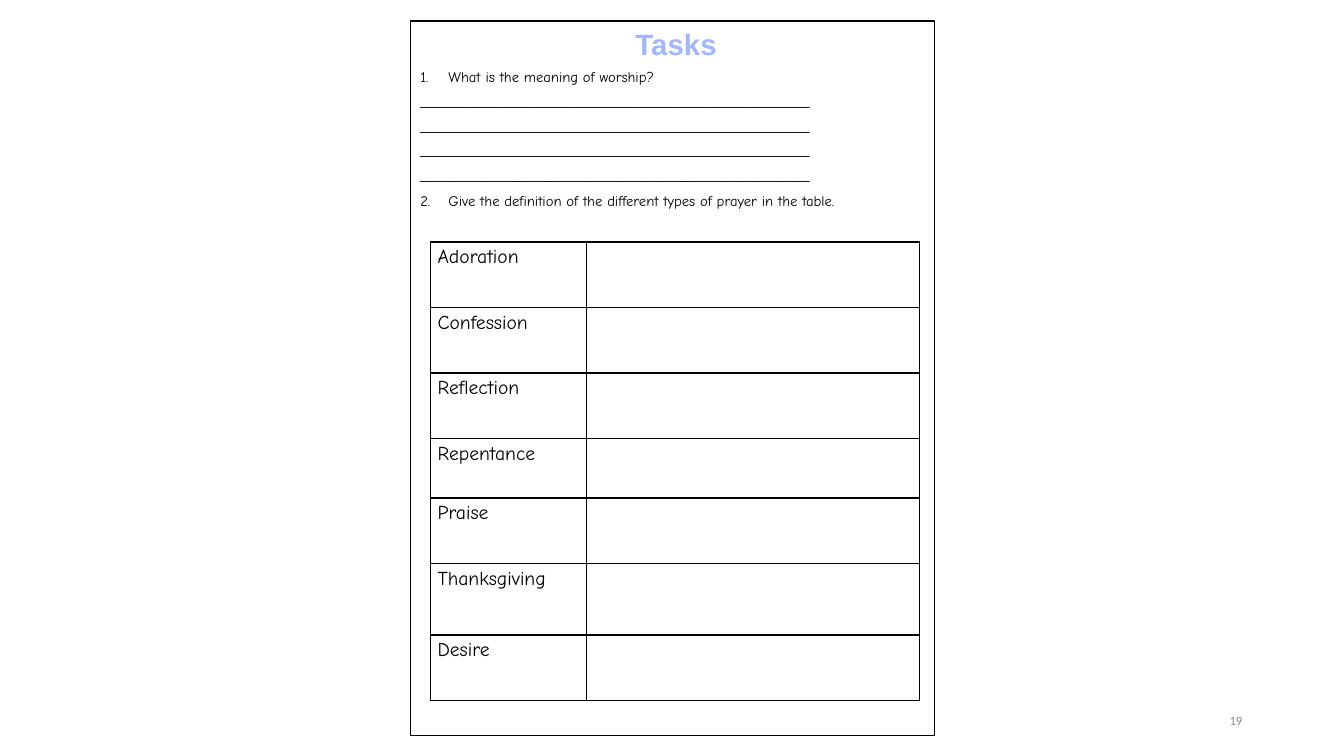
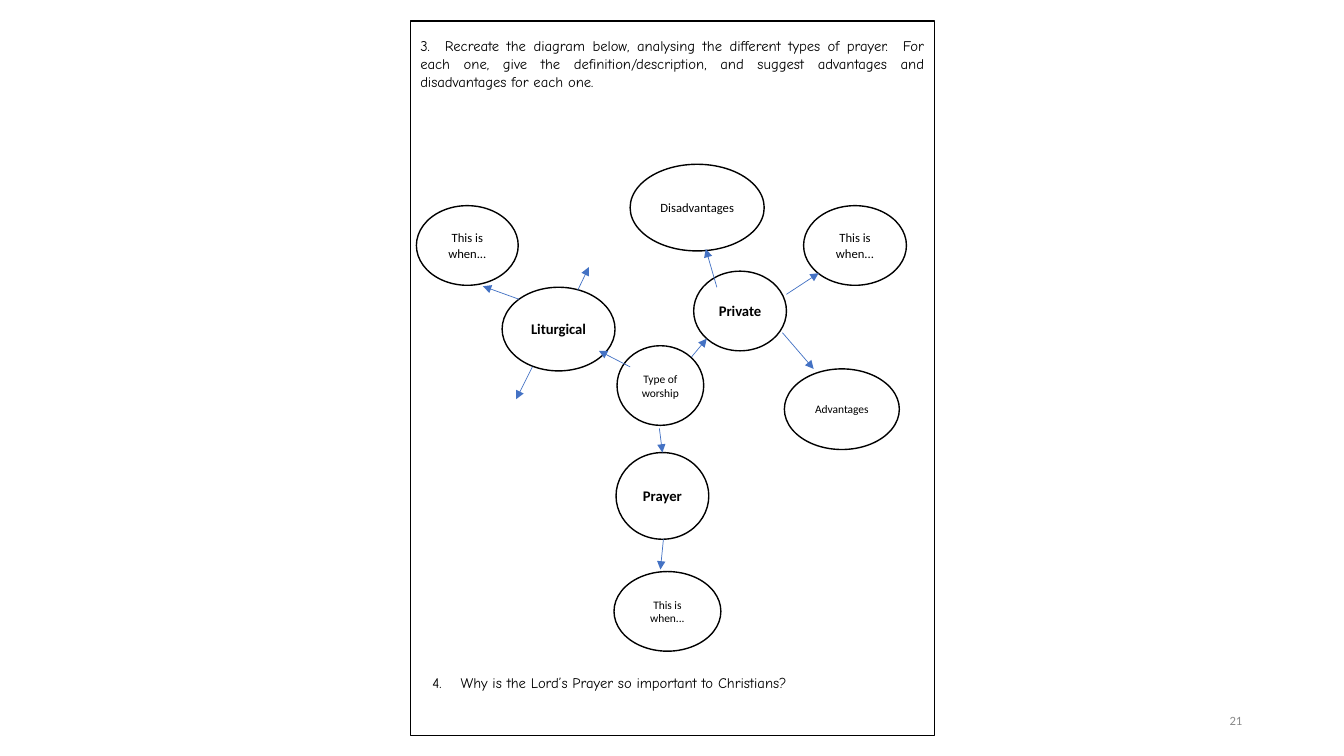
"""Builds two worksheet slides on worship and types of prayer."""
import pptx
import pptx.dml.color
import pptx.enum.shapes
import pptx.enum.text
import pptx.oxml.ns
import pptx.util
from lxml import etree

PX = 9144
BLACK = pptx.dml.color.RGBColor(0x00, 0x00, 0x00)
WHITE = pptx.dml.color.RGBColor(0xFF, 0xFF, 0xFF)
GREY = pptx.dml.color.RGBColor(0x89, 0x89, 0x89)
ARROW_BLUE = pptx.dml.color.RGBColor(0x44, 0x72, 0xC4)
TITLE_BLUE = pptx.dml.color.RGBColor(0xA1, 0xB8, 0xFF)
HAND_FONT = "Comic Neue"
BODY_FONT = "Calibri"
ALIGN = pptx.enum.text.PP_ALIGN
MIDDLE = pptx.enum.text.MSO_ANCHOR.MIDDLE
SHAPE = pptx.enum.shapes.MSO_SHAPE
qn = pptx.oxml.ns.qn


def write(frame, text, size=10.5, font=HAND_FONT, color=BLACK, bold=False,
          align=ALIGN.LEFT, before=0, number=None):
    """Add one formatted paragraph, numbered if a number is given."""
    paragraph = frame.add_paragraph() if frame.text else frame.paragraphs[0]
    paragraph.alignment = align
    paragraph.space_before = pptx.util.Pt(before)
    if number:
        properties = paragraph._p.get_or_add_pPr()
        properties.set("marL", str(28 * PX))
        properties.set("indent", str(-28 * PX))
        etree.SubElement(properties, qn("a:buAutoNum"),
                         type="arabicPeriod", startAt=str(number))
    run = paragraph.add_run()
    run.text = text
    run.font.size = pptx.util.Pt(size)
    run.font.name = font
    run.font.bold = bold
    run.font.color.rgb = color


def add_text_frame(slide, left, top, width, height):
    """Add a wrapping text box and return its frame."""
    box = slide.shapes.add_textbox(left * PX, top * PX, width * PX, height * PX)
    box.text_frame.word_wrap = True
    return box.text_frame


presentation = pptx.Presentation()
presentation.slide_width = 1333 * PX
presentation.slide_height = 750 * PX

slides = []
for page_number in ("19", "21"):
    slide = presentation.slides.add_slide(presentation.slide_layouts[6])
    page = slide.shapes.add_shape(SHAPE.RECTANGLE, 407 * PX, 21 * PX, 520 * PX, 709 * PX)
    page.shadow.inherit = False
    page.fill.background()
    page.line.color.rgb = BLACK
    page.line.width = pptx.util.Pt(1)
    footer = add_text_frame(slide, 942, 695, 300, 40)
    footer.vertical_anchor = MIDDLE
    write(footer, page_number, size=9, font=BODY_FONT, color=GREY, align=ALIGN.RIGHT)
    slides.append(slide)
task_slide, diagram_slide = slides

title = add_text_frame(task_slide, 620, 21, 101, 45)
write(title, "Tasks", size=21, font="Arial", color=TITLE_BLUE, bold=True, align=ALIGN.CENTER)

questions = add_text_frame(task_slide, 407, 62, 520, 210)
write(questions, "What is the meaning of worship?", align=ALIGN.JUSTIFY, number=1)
for answer_line in range(4):
    write(questions, "_" * 54, align=ALIGN.JUSTIFY, before=5.25)
write(questions, "Give the definition of the different types of prayer in the table.",
      align=ALIGN.JUSTIFY, before=5.25, number=2)

prayer_rows = [
    ("Adoration", 65), ("Confession", 65), ("Reflection", 65), ("Repentance", 59),
    ("Praise", 65), ("Thanksgiving", 71), ("Desire", 65),
]
table = task_slide.shapes.add_table(
    len(prayer_rows), 2, 427 * PX, 240 * PX, 485 * PX, 455 * PX).table
table.first_row = False
table.horz_banding = False
for column, width in zip(table.columns, (155, 330)):
    column.width = width * PX
for row, (prayer, height) in zip(table.rows, prayer_rows):
    row.height = height * PX
    write(row.cells[0].text_frame, prayer, size=14)
    for cell in row.cells:
        cell.margin_left = cell.margin_right = 7 * PX
        cell.margin_top = cell.margin_bottom = 4 * PX
        properties = cell._tc.get_or_add_tcPr()
        for side in ("a:lnL", "a:lnR", "a:lnT", "a:lnB"):
            border = etree.SubElement(properties, qn(side), w=str(pptx.util.Pt(1)))
            fill = etree.SubElement(border, qn("a:solidFill"))
            etree.SubElement(fill, qn("a:srgbClr"), val=str(BLACK))
        cell.fill.background()

question = add_text_frame(diagram_slide, 407, 32, 520, 63)
write(question, "3.  Recreate the diagram below, analysing the different types of prayer.  "
      "For each one, give the definition/description, and suggest advantages and "
      "disadvantages for each one.", align=ALIGN.JUSTIFY)

bubbles = [
    ("Type of worship", 612, 343, 86, 79, 8.2, False),
    ("Private", 688, 269, 92, 79, 10.5, True),
    ("This is when...", 797, 204, 102, 79, 9, False),
    ("Disadvantages", 625, 163, 133, 86, 9, False),
    ("Advantages", 778, 366, 114, 80, 8.2, False),
    ("Prayer", 611, 449, 92, 86, 10.5, True),
    ("This is when...", 609, 567, 106, 79, 8.2, False),
    ("Liturgical", 498, 285, 112, 83, 10.5, True),
    ("This is when...", 413, 204, 101, 79, 9, False),
]
for text, left, top, width, height, size, bold in bubbles:
    bubble = diagram_slide.shapes.add_shape(
        SHAPE.FLOWCHART_CONNECTOR, left * PX, top * PX, width * PX, height * PX)
    bubble.shadow.inherit = False
    bubble.fill.solid()
    bubble.fill.fore_color.rgb = WHITE
    bubble.line.color.rgb = BLACK
    bubble.line.width = pptx.util.Pt(1)
    frame = bubble.text_frame
    frame.word_wrap = True
    frame.vertical_anchor = MIDDLE
    frame.margin_left = frame.margin_right = 8 * PX
    write(frame, text, size=size, font=BODY_FONT, bold=bold, align=ALIGN.CENTER)

arrows = [
    (515, 297, 479, 284), (573, 288, 584, 265), (528, 364, 512, 396),
    (625, 364, 594, 348), (686, 354, 701, 336), (711, 285, 700, 247),
    (780, 292, 812, 271), (776, 330, 807, 366), (654, 425, 657, 449),
    (658, 535, 655, 565),
]
for ends in arrows:
    arrow = diagram_slide.shapes.add_connector(
        pptx.enum.shapes.MSO_CONNECTOR.STRAIGHT, *(end * PX for end in ends))
    arrow.line.color.rgb = ARROW_BLUE
    arrow.line.width = pptx.util.Pt(0.5)
    properties = arrow._element.spPr
    etree.SubElement(properties.find(qn("a:ln")), qn("a:tailEnd"), type="triangle")
    etree.SubElement(properties, qn("a:effectLst"))

last_question = add_text_frame(diagram_slide, 419, 664, 411, 45)
write(last_question, "Why is the Lord’s Prayer so important to Christians?", number=4)

presentation.save("out.pptx")
